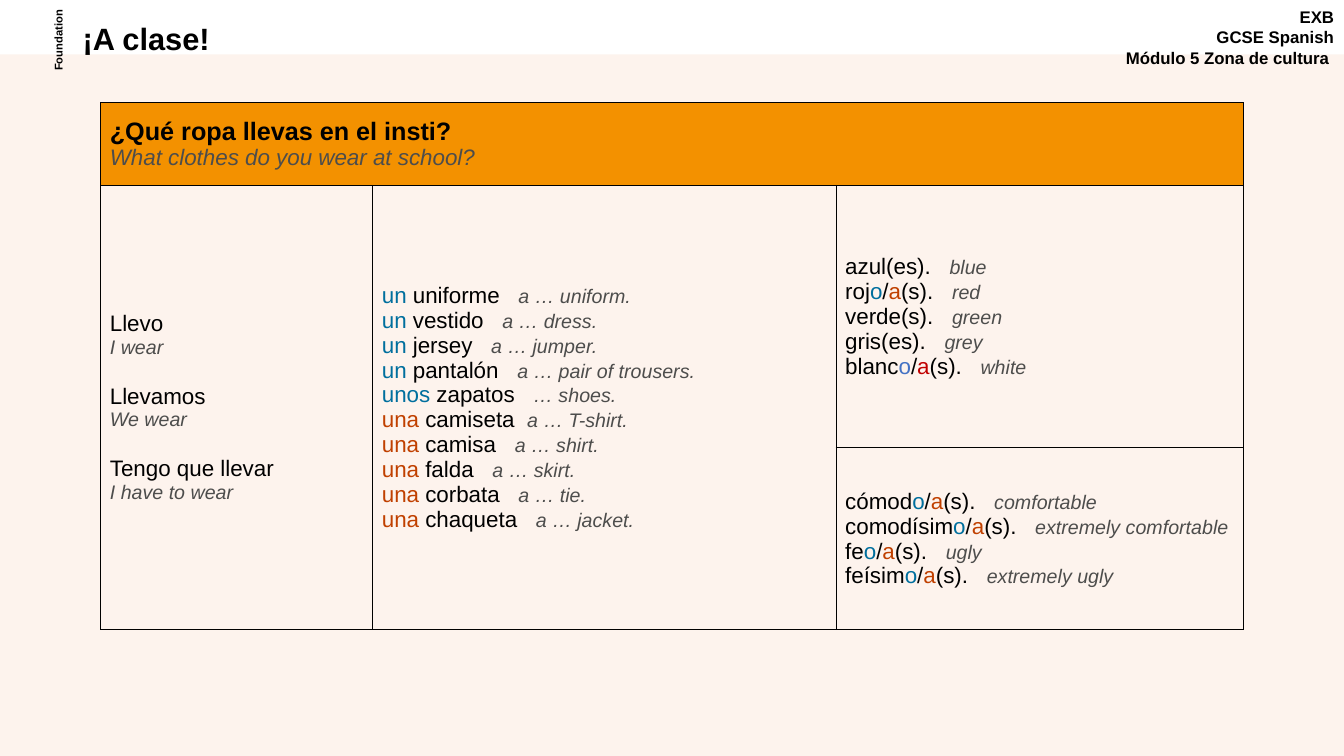
import pptx
import pptx.dml.color
import pptx.enum.shapes
import pptx.enum.text
import pptx.oxml
import pptx.oxml.ns
import pptx.util
from pptx.util import Inches

COLOURS = {
    "text": "000000", "english": "4D4D4C", "header": "F39100", "page": "FDF3ED",
    "masculine": "006F9E", "feminine": "C04000",
    "white_masculine": "4472C4", "white_feminine": "C00000",
}
FONT = "Arial"
SPACE_WIDTH = 445
VERBS = [
    ("Llevo", "I wear"),
    ("Llevamos", "We wear"),
    ("Tengo que llevar", "I have to wear"),
]
CLOTHES = [
    ("un", "uniforme", "a … uniform."),
    ("un", "vestido", "a … dress."),
    ("un", "jersey", "a … jumper."),
    ("un", "pantalón", "a … pair of trousers."),
    ("unos", "zapatos", "… shoes."),
    ("una", "camiseta", "a … T-shirt."),
    ("una", "camisa", "a … shirt."),
    ("una", "falda", "a … skirt."),
    ("una", "corbata", "a … tie."),
    ("una", "chaqueta", "a … jacket."),
]
SHADES = [
    ("azul", "(es).", "blue"),
    ("roj", "o/a", "red"),
    ("verde", "(s).", "green"),
    ("gris", "(es).", "grey"),
    ("blanc", "o/a", "white"),
]
OPINIONS = [
    ("cómod", "o/a", "comfortable"),
    ("comodísim", "o/a", "extremely comfortable"),
    ("fe", "o/a", "ugly"),
    ("feísim", "o/a", "extremely ugly"),
]


def rgb(name):
    return pptx.dml.color.RGBColor.from_string(COLOURS[name])


def format_run(run, size, colour="text", bold=False, italic=False):
    run.font.name = FONT
    run.font.size = pptx.util.Pt(size)
    run.font.color.rgb = rgb(colour)
    run.font.bold = bold
    run.font.italic = italic


def add_run(paragraph, text, size=16, colour="text", bold=False, italic=False):
    run = paragraph.add_run()
    run.text = text
    format_run(run, size, colour, bold, italic)
    return run


def add_english(paragraph, text, size=14):
    add_run(paragraph, text, size, "english", italic=True)


def add_gap(paragraph, spaces=3):
    gap = add_run(paragraph, " ")
    gap._r.get_or_add_rPr().set("spc", str(SPACE_WIDTH * (spaces - 1)))


def paragraphs_for(cell, count):
    for _ in range(count - 1):
        cell.text_frame.add_paragraph()
    return cell.text_frame.paragraphs


def add_band(slide, left, top, width, height):
    band = slide.shapes.add_shape(
        pptx.enum.shapes.MSO_SHAPE.RECTANGLE, left, top, width, height)
    band.shadow.inherit = False
    band.fill.solid()
    band.fill.fore_color.rgb = rgb("page")
    band.line.fill.background()
    slide.shapes._spTree.insert(2, band._element)


def add_title(slide, left, top, width, height):
    title = slide.shapes.title
    title.left, title.top, title.width, title.height = left, top, width, height
    frame = title.text_frame
    frame.text = "¡A clase!"
    frame.auto_size = pptx.enum.text.MSO_AUTO_SIZE.NONE
    frame.vertical_anchor = pptx.enum.text.MSO_ANCHOR.MIDDLE
    paragraph = frame.paragraphs[0]
    paragraph.alignment = pptx.enum.text.PP_ALIGN.LEFT
    paragraph.line_spacing = 0.9
    format_run(paragraph.runs[0], 22, bold=True)


def add_label(slide, left, top, width, height, lines, size, alignment, rotation=0):
    label = slide.shapes.add_textbox(left, top, width, height)
    label.rotation = rotation
    label.text_frame.word_wrap = True
    label.text_frame.text = "\n".join(lines)
    for paragraph in label.text_frame.paragraphs:
        paragraph.alignment = alignment
        format_run(paragraph.runs[0], size, bold=True)


def fill_heading(cell):
    spanish, english = paragraphs_for(cell, 2)
    add_run(spanish, "¿Qué ropa llevas en el insti?", 18, bold=True)
    add_english(english, "What clothes do you wear at school?", 16)


def fill_verbs(cell):
    paragraphs = paragraphs_for(cell, 2 * len(VERBS))
    for index, (spanish, english) in enumerate(VERBS):
        if index:
            paragraphs[2 * index].space_before = pptx.util.Pt(18.4)
        add_run(paragraphs[2 * index], spanish)
        add_english(paragraphs[2 * index + 1], english)


def fill_clothes(cell):
    for paragraph, (article, noun, english) in zip(paragraphs_for(cell, len(CLOTHES)), CLOTHES):
        add_run(paragraph, article, colour="feminine" if article == "una" else "masculine")
        add_run(paragraph, " " + noun)
        add_gap(paragraph, 2 if noun == "camiseta" else 3)
        add_english(paragraph, english)


def fill_adjectives(cell, adjectives):
    for paragraph, (stem, ending, english) in zip(paragraphs_for(cell, len(adjectives)), adjectives):
        if ending == "o/a":
            prefix = "white_" if english == "white" else ""
            add_run(paragraph, stem)
            add_run(paragraph, "o", colour=prefix + "masculine")
            add_run(paragraph, "/")
            add_run(paragraph, "a", colour=prefix + "feminine")
            add_run(paragraph, "(s).")
        else:
            add_run(paragraph, stem + ending)
        add_gap(paragraph)
        add_english(paragraph, english)


def format_cell(cell, is_heading):
    properties = cell._tc.get_or_add_tcPr()
    for side in ("lnL", "lnR", "lnT", "lnB"):
        properties.append(pptx.oxml.parse_xml(
            f'<a:{side} {pptx.oxml.ns.nsdecls("a")} w="{pptx.util.Pt(0.75)}"><a:solidFill>'
            f'<a:srgbClr val="{COLOURS["text"]}"/></a:solidFill></a:{side}>'))
    if is_heading:
        cell.fill.solid()
        cell.fill.fore_color.rgb = rgb("header")
    else:
        cell.fill.background()
    cell.vertical_anchor = pptx.enum.text.MSO_ANCHOR.MIDDLE
    cell.margin_left = cell.margin_right = Inches(0.09)
    cell.margin_top = cell.margin_bottom = Inches(0.04)


def add_vocabulary(slide, left, top, width, height):
    table = slide.shapes.add_table(3, 3, left, top, width, height).table
    table.first_row = table.horz_banding = False
    for column, share in zip(table.columns, (2.7, 4.6, 4.04)):
        column.width = int(width * share / 11.34)
    for row, share in zip(table.rows, (0.82, 2.61, 1.81)):
        row.height = int(height * share / 5.24)
    for row_index, row in enumerate(table.rows):
        for cell in row.cells:
            format_cell(cell, row_index == 0)
    table.cell(0, 0).merge(table.cell(0, 2))
    for column_index in (0, 1):
        table.cell(1, column_index).merge(table.cell(2, column_index))
    fill_heading(table.cell(0, 0))
    fill_verbs(table.cell(1, 0))
    fill_clothes(table.cell(1, 1))
    fill_adjectives(table.cell(1, 2), SHADES)
    fill_adjectives(table.cell(2, 2), OPINIONS)


def main():
    presentation = pptx.Presentation()
    presentation.slide_width = Inches(13.33)
    presentation.slide_height = Inches(7.5)
    slide = presentation.slides.add_slide(presentation.slide_layouts[5])
    align = pptx.enum.text.PP_ALIGN
    add_band(slide, 0, Inches(0.54), Inches(13.33), Inches(6.96))
    add_label(slide, Inches(10.99), Inches(0.02), Inches(2.34), Inches(0.77),
              ["EXB", "GCSE Spanish", "Módulo 5 Zona de cultura "], 12, align.RIGHT)
    add_title(slide, Inches(0.72), Inches(0.19), Inches(6.88), Inches(0.43))
    add_label(slide, Inches(0.06), Inches(0.29), Inches(1.02), Inches(0.22),
              ["Foundation"], 8, align.CENTER, 270)
    add_vocabulary(slide, Inches(1), Inches(1.02), Inches(11.33), Inches(5.23))
    presentation.save("out.pptx")


if __name__ == "__main__":
    main()
